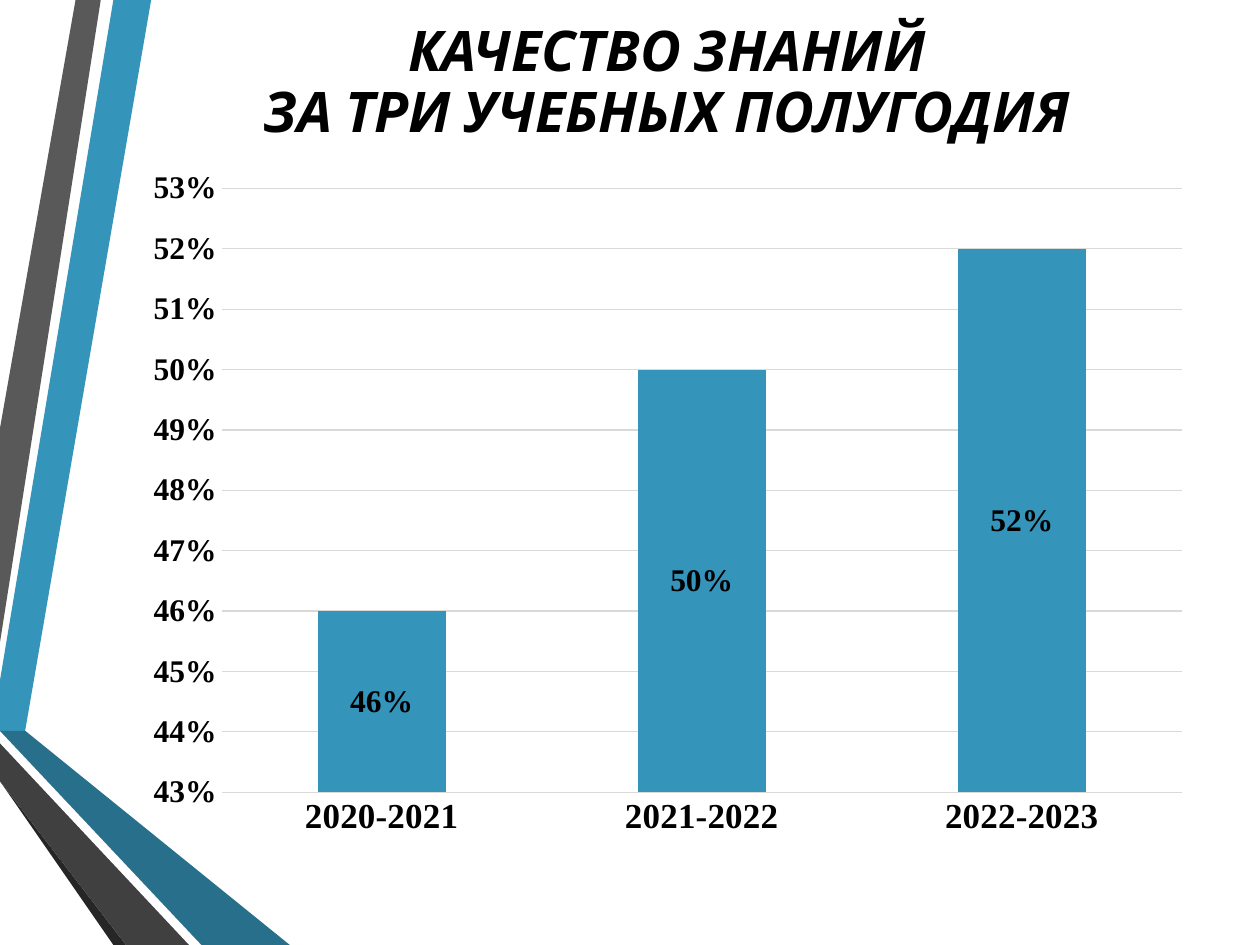
from pptx import Presentation
from pptx.chart.data import CategoryChartData
from pptx.dml.color import RGBColor
from pptx.enum.chart import XL_CHART_TYPE, XL_TICK_MARK
from pptx.enum.text import MSO_ANCHOR, MSO_AUTO_SIZE, PP_ALIGN
from pptx.util import Inches, Pt

# Grid of 100 columns by 75 rows of square cells
COLS, ROWS = 100, 75
CELL = Inches(0.1)

BLACK = RGBColor(0x00, 0x00, 0x00)
BLUE = RGBColor(0x34, 0x94, 0xBA)
DEEP_BLUE = RGBColor(0x27, 0x6F, 0x8B)
DARK_BLUE = RGBColor(0x1A, 0x4A, 0x5D)
GRAY = RGBColor(0x59, 0x59, 0x59)
DARK_GRAY = RGBColor(0x40, 0x40, 0x40)
NEAR_BLACK = RGBColor(0x26, 0x26, 0x26)
GRID_GRAY = RGBColor(0xD9, 0xD9, 0xD9)

TITLE_FONT = {"name": "Cabin", "size": Pt(32), "bold": True, "italic": True}
VALUE_FONT = {"name": "Times New Roman", "size": Pt(18), "bold": True}
CATEGORY_FONT = {**VALUE_FONT, "size": Pt(20)}

# Ribbon outlines as (column, row) points, back to front
RIBBONS = [
    (BLUE, [(0, 54.4), (0, 57.5), (2.2, 57.9), (11.7, 0), (8.9, 0)]),
    (GRAY, [(8.3, 0), (5.5, 0), (0, 33.6), (0, 50.6)]),
    (NEAR_BLACK, [(0, 61.9), (0, 62.1), (9.3, ROWS), (9.9, ROWS)]),
    (DARK_BLUE, [(0, 57.9), (0, 58), (15.6, ROWS), (16.3, ROWS)]),
    (DEEP_BLUE, [(0, 57.9), (16.3, ROWS), (23.3, ROWS), (2.2, 57.9), (0, 57.5)]),
    (DARK_GRAY, [(0, 61.9), (9.9, ROWS), (15.1, ROWS), (0, 58.6)]),
]

QUALITY = {"2020-2021": 0.46, "2021-2022": 0.50, "2022-2023": 0.52}


def cells(*counts):
    return [round(n * CELL) for n in counts]


def format_font(font, values):
    for name, value in values.items():
        setattr(font, name, value)
    font.color.rgb = BLACK


def add_ribbon(s, color, points):
    builder = s.shapes.build_freeform(*points[0], scale=CELL)
    builder.add_line_segments(points[1:], close=True)
    sp = builder.convert_to_shape()
    sp.fill.solid()
    sp.fill.fore_color.rgb = color
    sp.line.fill.background()
    sp.shadow.inherit = False


def set_title(s, text):
    sp = s.shapes.title
    sp.left, sp.top, sp.width, sp.height = cells(10.8, 3.3, 84.3, 6.7)
    tf = sp.text_frame
    tf.word_wrap = True
    tf.auto_size = MSO_AUTO_SIZE.NONE
    tf.vertical_anchor = MSO_ANCHOR.MIDDLE
    p = tf.paragraphs[0]
    p.text = text
    p.alignment = PP_ALIGN.CENTER
    p.line_spacing = 0.9
    for r in p.runs:
        format_font(r.font, TITLE_FONT)


def format_axis(axis, font):
    axis.major_tick_mark = axis.minor_tick_mark = XL_TICK_MARK.NONE
    axis.format.line.fill.background()
    format_font(axis.tick_labels.font, font)


def add_quality_chart(s):
    data = CategoryChartData(number_format="0%")
    data.categories = QUALITY.keys()
    data.add_series("Series 1", QUALITY.values())
    chart = s.shapes.add_chart(
        XL_CHART_TYPE.COLUMN_STACKED, *cells(10.5, 12.5, 85, 55), data).chart
    chart.has_legend = chart.has_title = False
    format_font(chart.font, {"name": "Cabin", "size": Pt(10)})

    # Axes
    format_axis(chart.category_axis, CATEGORY_FONT)
    axis = chart.value_axis
    format_axis(axis, VALUE_FONT)
    axis.minimum_scale, axis.maximum_scale, axis.major_unit = 0.43, 0.53, 0.01
    axis.tick_labels.number_format = "0%"
    axis.tick_labels.number_format_is_linked = False
    grid_line = axis.major_gridlines.format.line
    grid_line.color.rgb = GRID_GRAY
    grid_line.width = Pt(0.75)

    # Columns and their labels
    plot = chart.plots[0]
    plot.gap_width, plot.overlap = 150, 100
    plot.vary_by_categories = False
    series = plot.series[0]
    series.format.fill.solid()
    series.format.fill.fore_color.rgb = BLUE
    labels = series.data_labels
    labels.show_value = True
    labels.number_format = "0%"
    labels.number_format_is_linked = False
    format_font(labels.font, VALUE_FONT)


def main():
    prs = Presentation()
    prs.slide_width, prs.slide_height = cells(COLS, ROWS)
    s = prs.slides.add_slide(prs.slide_layouts[5])
    for color, points in RIBBONS:
        add_ribbon(s, color, points)
    set_title(s, "КАЧЕСТВО ЗНАНИЙ\vЗА ТРИ УЧЕБНЫХ ПОЛУГОДИЯ")
    add_quality_chart(s)
    prs.save("out.pptx")


if __name__ == "__main__":
    main()
